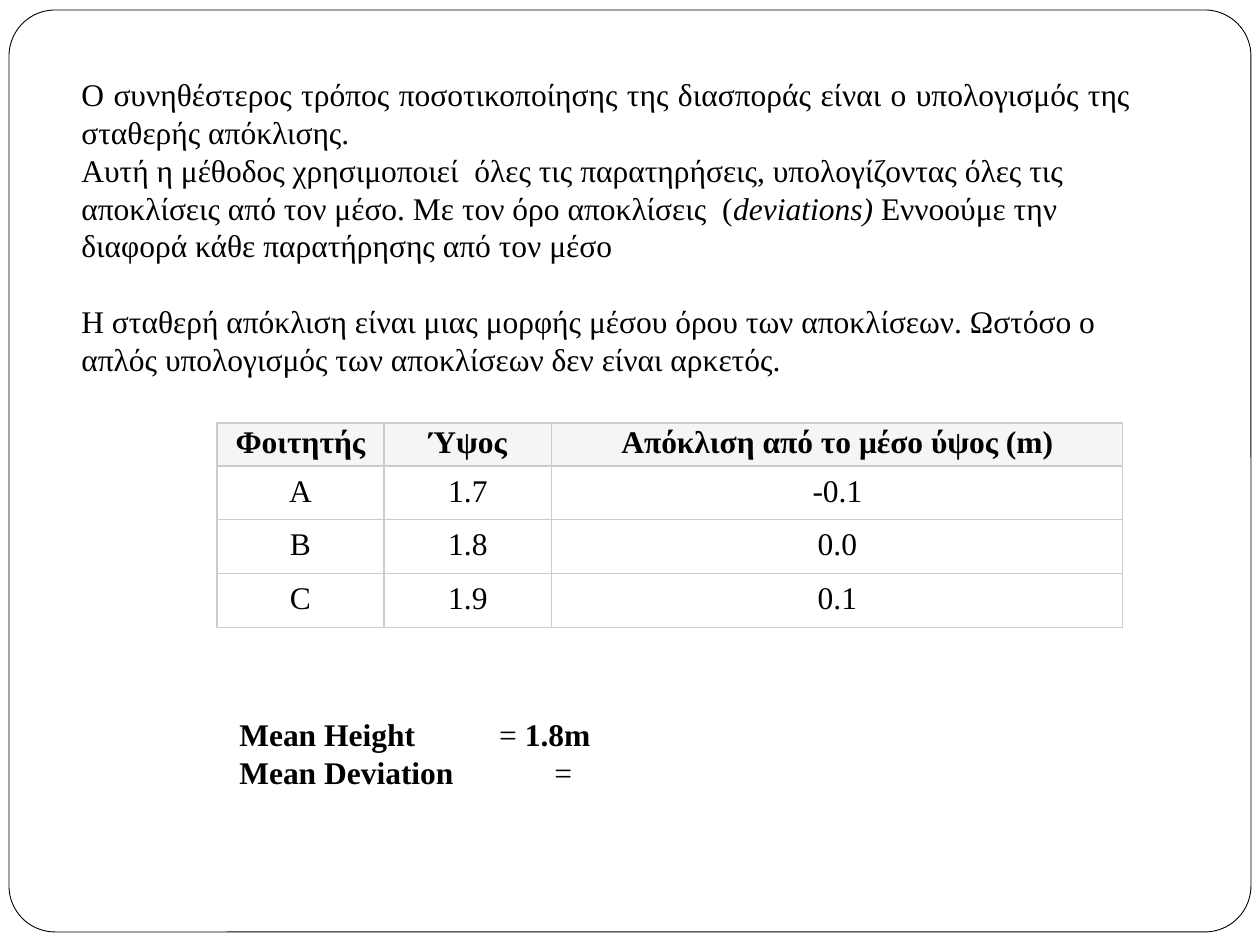
from lxml import etree
from pptx import Presentation
from pptx import util as u
from pptx.dml.color import RGBColor
from pptx.enum import shapes, text
from pptx.oxml.ns import qn

PX = u.Inches(1) / 126
FONT = "Times New Roman"
BLACK, WHITE, HEADER, GRID = "000000", "FFFFFF", "F5F5F5", "CCCCCC"

INTRO = ["Ο συνηθέστερος τρόπος ποσοτικοποίησης της διασποράς είναι ο υπολογισμός "
         "της σταθερής απόκλισης."]
METHOD = ["Αυτή η μέθοδος χρησιμοποιεί  όλες τις παρατηρήσεις, υπολογίζοντας όλες τις "
          "αποκλίσεις από τον μέσο. Με τον όρο αποκλίσεις  (",
          ("deviations) ", {"italic": True}),
          "Εννοούμε την διαφορά κάθε παρατήρησης από τον μέσο"]
REMARK = ["Η σταθερή απόκλιση είναι μιας μορφής μέσου όρου των αποκλίσεων. Ωστόσο ο "
          "απλός υπολογισμός των αποκλίσεων δεν είναι αρκετός."]
BOLD = {"bold": True}
MEAN_HEIGHT = [("Mean Height\t\t ", BOLD), "=", (" 1.8m", BOLD)]
MEAN_DEVIATION = [("Mean Deviation \t\t", BOLD), "="]

HEIGHTS = [
    ["Φοιτητής", "Ύψος", "Απόκλιση από το μέσο ύψος (m)"],
    ["A", "1.7", "-0.1"],
    ["B", "1.8", "0.0"],
    ["C", "1.9", "0.1"],
]


def px(length):
    return u.Emu(round(length * PX))


def color(value):
    return RGBColor.from_string(value)


def add_span(para, words, bold=False, italic=False, size=18):
    span = para.add_run()
    span.text = words
    span.font.name = FONT
    span.font.size = u.Pt(size)
    span.font.bold = bold
    span.font.italic = italic
    span.font.color.rgb = color(BLACK)


def fill_para(para, spans, align=text.PP_ALIGN.LEFT, before=0):
    """Write spans, each a string or a (string, format) pair."""
    para.alignment = align
    para.space_before = u.Pt(before)
    for span in spans:
        words, look = (span, {}) if isinstance(span, str) else span
        add_span(para, words, **look)


def add_text(page, left, top, width, height, paras):
    """Add a text box from (spans, paragraph format) pairs."""
    box = page.shapes.add_textbox(px(left), px(top), px(width), px(height))
    frame = box.text_frame
    frame.word_wrap = True
    frame.auto_size = text.MSO_AUTO_SIZE.SHAPE_TO_FIT_TEXT
    for index, (spans, look) in enumerate(paras):
        para = frame.add_paragraph() if index else frame.paragraphs[0]
        fill_para(para, spans, **look)


def add_frame(page, left, top, width, height):
    frame = page.shapes.add_shape(shapes.MSO_SHAPE.ROUNDED_RECTANGLE,
                                  px(left), px(top), px(width), px(height))
    frame.adjustments[0] = 0.05
    frame.shadow.inherit = False
    frame.fill.solid()
    frame.fill.fore_color.rgb = color(WHITE)
    frame.line.color.rgb = color(BLACK)
    frame.line.width = u.Pt(0.5)


def set_borders(cell, line_color, width):
    props = cell._tc.get_or_add_tcPr()
    for index, side in enumerate(("a:lnL", "a:lnR", "a:lnT", "a:lnB")):
        line = etree.Element(qn(side), w=str(u.Pt(width)))
        fill = etree.SubElement(line, qn("a:solidFill"))
        etree.SubElement(fill, qn("a:srgbClr"), val=line_color)
        props.insert(index, line)


def format_cell(cell, words, is_header):
    across, down = (2, 2) if is_header else (10, 8)
    cell.margin_left = cell.margin_right = px(across)
    cell.margin_top = cell.margin_bottom = px(down)
    cell.fill.solid()
    cell.fill.fore_color.rgb = color(HEADER if is_header else WHITE)
    set_borders(cell, GRID, 0.75)
    fill_para(cell.text_frame.paragraphs[0], [(words, {"bold": is_header})],
              align=text.PP_ALIGN.CENTER)


def add_table(page, left, top, widths, heights, rows):
    table = page.shapes.add_table(len(rows), len(widths), px(left), px(top),
                                  px(sum(widths)), px(sum(heights))).table
    table.first_row = table.horz_banding = False
    for column, width in zip(table.columns, widths):
        column.width = px(width)
    for index, (row, height) in enumerate(zip(table.rows, heights)):
        row.height = px(height)
        for cell, words in zip(row.cells, rows[index]):
            format_cell(cell, words, is_header=index == 0)


def main():
    deck = Presentation()
    deck.slide_width, deck.slide_height = px(1260), px(945)
    page = deck.slides.add_slide(deck.slide_layouts[6])
    add_frame(page, 9, 10, 1242, 922)
    add_text(page, 69, 69, 1074, 357, [
        (INTRO, {"align": text.PP_ALIGN.JUSTIFY}),
        (METHOD, {}),
        (REMARK, {"before": 21.6}),
    ])
    add_table(page, 217, 423, [167, 168, 571], [43] + [53] * 3, HEIGHTS)
    add_text(page, 227, 709, 630, 89, [(MEAN_HEIGHT, {}), (MEAN_DEVIATION, {})])
    deck.save("out.pptx")


if __name__ == "__main__":
    main()
